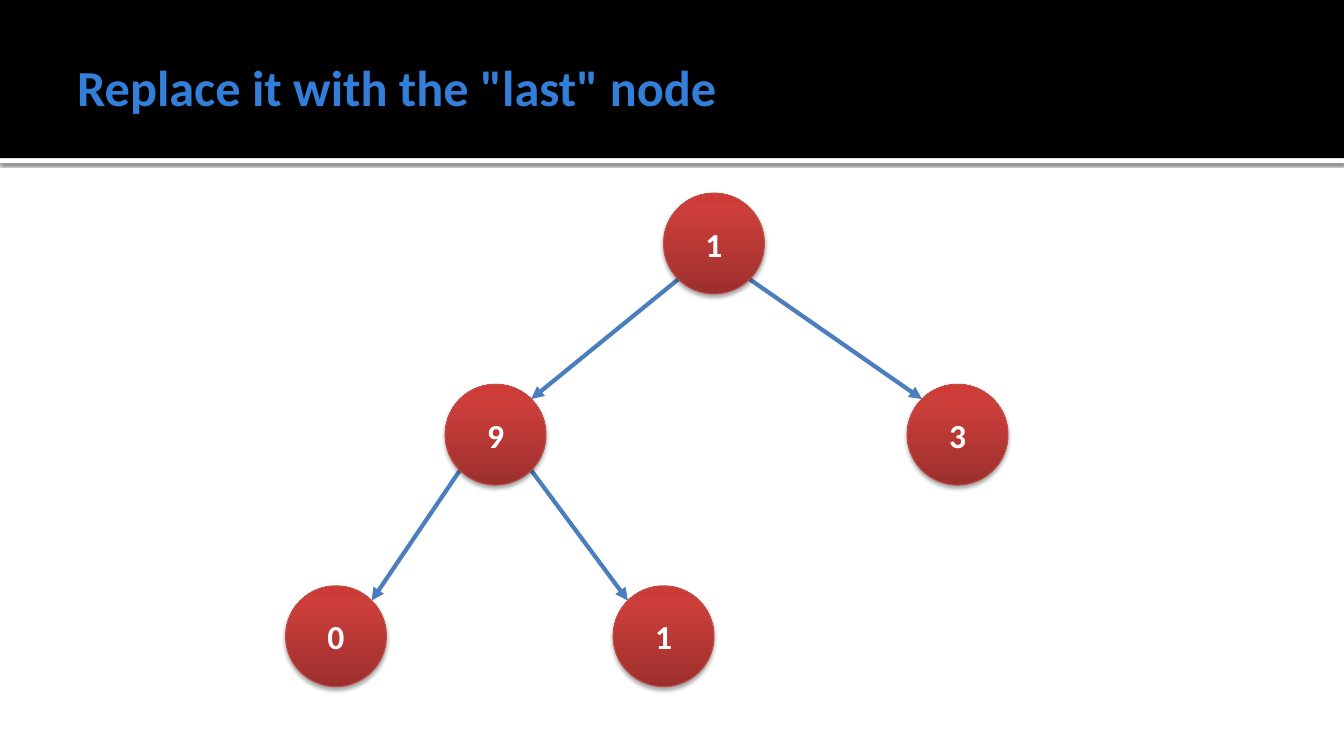
import math
import pptx
import pptx.util
import pptx.dml.color
import pptx.enum.shapes
import pptx.enum.text
import pptx.oxml
import pptx.oxml.ns

Pt = pptx.util.Pt
RGB = pptx.dml.color.RGBColor
Shape = pptx.enum.shapes.MSO_SHAPE
qn = pptx.oxml.ns.qn

TITLE = 'Replace it with the "last" node'
# name: (label, left, row)
NODES = {
    "root": ("1", 474, 0),
    "left": ("9", 318, 1),
    "right": ("3", 648, 1),
    "first": ("0", 204, 2),
    "last": ("1", 438, 2),
}
EDGES = [("root", "left"), ("root", "right"), ("left", "first"), ("left", "last")]
ROWS = [138, 274.5, 418.5]
SIZE = 72
FONT = "Calibri"

BLACK = RGB(0x00, 0x00, 0x00)
WHITE = RGB(0xFF, 0xFF, 0xFF)
BLUE = RGB(0x33, 0x7E, 0xD9)
ARROW = RGB(0x4B, 0x7E, 0xBC)
RIM = RGB(0xBF, 0x4C, 0x48)
# position in percent, colour
REDS = [
    (0, RGB(0x9C, 0x2F, 0x2D)),
    (80, RGB(0xCB, 0x3E, 0x3A)),
    (100, RGB(0xCE, 0x3B, 0x37)),
]


def parse_xml(text):
    head, tail = text.split(" ", 1)
    return pptx.oxml.parse_xml(f"{head} {pptx.oxml.ns.nsdecls('a')} {tail}")


def add_shade(shape, alpha, blur, dist):
    """Give the shape a soft shadow that falls straight down."""
    shape.shadow.inherit = False
    shape._element.spPr.find(qn("a:effectLst")).append(parse_xml(
        f'<a:outerShdw blurRad="{Pt(blur)}" dist="{Pt(dist)}" dir="5400000" '
        f'rotWithShape="0"><a:srgbClr val="{BLACK}">'
        f'<a:alpha val="{alpha * 1000}"/></a:srgbClr></a:outerShdw>'))


def add_text(shape, text, size, color, align):
    frame = shape.text_frame
    frame.word_wrap = True
    frame.vertical_anchor = pptx.enum.text.MSO_ANCHOR.MIDDLE
    para = frame.paragraphs[0]
    para.alignment = align
    run = para.add_run()
    run.text = text
    run.font.name = FONT
    run.font.size = Pt(size)
    run.font.bold = True
    run.font.color.rgb = color


def add_band(slide, top, height, color):
    band = slide.shapes.add_shape(Shape.RECTANGLE, 0, Pt(top), Pt(960), Pt(height))
    band.shadow.inherit = False
    band.fill.solid()
    band.fill.fore_color.rgb = color
    band.line.fill.background()
    return band


def add_title(slide):
    box = slide.shapes.add_textbox(Pt(48), Pt(12), Pt(864), Pt(99))
    add_text(box, TITLE, 36, BLUE, pptx.enum.text.PP_ALIGN.LEFT)
    box.text_frame.margin_right = Pt(3.6)


def add_edge(slide, start, end):
    """Draw an arrow from the lower diagonal of a node to the upper one of its child."""
    (_, x1, row1), (_, x2, row2) = NODES[start], NODES[end]
    half = SIZE / 2
    off = half * math.sqrt(0.5)
    side = math.copysign(off, x2 - x1)
    line = slide.shapes.add_connector(
        pptx.enum.shapes.MSO_CONNECTOR.STRAIGHT,
        Pt(x1 + half + side), Pt(ROWS[row1] + half + off),
        Pt(x2 + half - side), Pt(ROWS[row2] + half - off))
    line.line.color.rgb = ARROW
    line.line.width = Pt(3)
    line.line._get_or_add_ln().append(parse_xml('<a:tailEnd type="triangle"/>'))
    line._element.spPr.append(parse_xml("<a:effectLst />"))


def add_node(slide, label, left, row):
    node = slide.shapes.add_shape(
        Shape.OVAL, Pt(left), Pt(ROWS[row]), Pt(SIZE), Pt(SIZE))
    stops = "".join(
        f'<a:gs pos="{pos * 1000}"><a:srgbClr val="{color}"/></a:gs>'
        for pos, color in REDS)
    node._element.spPr.find(qn("a:prstGeom")).addnext(parse_xml(
        f'<a:gradFill rotWithShape="1"><a:gsLst>{stops}</a:gsLst>'
        '<a:lin ang="16200000" scaled="0"/></a:gradFill>'))
    node.line.color.rgb = RIM
    node.line.width = Pt(0.75)
    add_shade(node, 35, 3.1, 1.8)
    add_text(node, label, 24, WHITE, pptx.enum.text.PP_ALIGN.CENTER)


def main():
    deck = pptx.Presentation()
    deck.slide_width = Pt(960)
    deck.slide_height = Pt(540)
    slide = deck.slides.add_slide(deck.slide_layouts[6])
    add_shade(add_band(slide, 113, 3.6, WHITE), 60, 2.5, 0.8)
    add_band(slide, 0, 113, BLACK)
    add_title(slide)
    for edge in EDGES:
        add_edge(slide, *edge)
    for node in NODES.values():
        add_node(slide, *node)
    deck.save("out.pptx")


if __name__ == "__main__":
    main()
